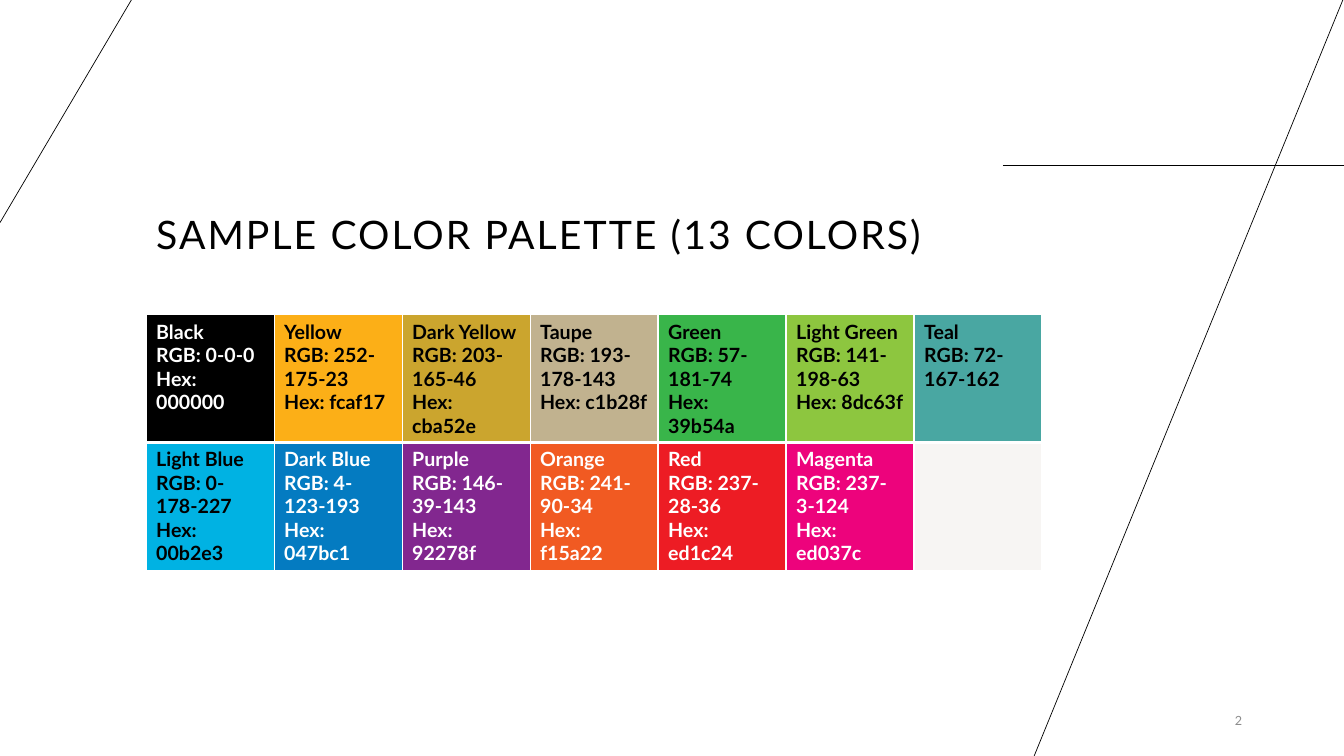
from dataclasses import dataclass

from lxml import etree
from pptx import Presentation
from pptx.dml.color import RGBColor
from pptx.enum.shapes import MSO_CONNECTOR
from pptx.enum.text import MSO_ANCHOR, MSO_AUTO_SIZE, PP_ALIGN
from pptx.oxml.ns import qn
from pptx.util import Pt

STRAIGHT = MSO_CONNECTOR.STRAIGHT
BOTTOM, MIDDLE = MSO_ANCHOR.BOTTOM, MSO_ANCHOR.MIDDLE
LEFT, RIGHT = PP_ALIGN.LEFT, PP_ALIGN.RIGHT
NO_AUTOFIT = MSO_AUTO_SIZE.NONE


@dataclass(frozen=True)
class Theme:
    font: str = "Lato"
    black: str = "000000"
    white: str = "FFFFFF"
    gray: str = "8C8C8C"
    empty: str = "F7F5F3"
    title_size: float = 28
    cell_size: float = 14
    number_size: float = 9


THEME = Theme()

# Each swatch: fill, text colour, lines of text
SWATCH_ROWS = [
    [
        ("000000", THEME.white, ["Black", "RGB: 0-0-0", "Hex: 000000"]),
        ("FCAF17", THEME.black, ["Yellow", "RGB: 252-175-23", "Hex: fcaf17"]),
        ("CBA52E", THEME.black, ["Dark Yellow", "RGB: 203-165-46", "Hex: cba52e"]),
        ("C1B28F", THEME.black, ["Taupe", "RGB: 193-178-143", "Hex: c1b28f"]),
        ("39B54A", THEME.black, ["Green", "RGB: 57-181-74", "Hex: 39b54a"]),
        ("8DC63F", THEME.black, ["Light Green", "RGB: 141-198-63", "Hex: 8dc63f"]),
        ("49A7A2", THEME.black, ["Teal", "RGB: 72-167-162"]),
    ],
    [
        ("00B2E3", THEME.black, ["Light Blue", "RGB: 0-178-227", "Hex: 00b2e3"]),
        ("047BC1", THEME.white, ["Dark Blue", "RGB: 4-123-193", "Hex: 047bc1"]),
        ("82278F", THEME.white, ["Purple", "RGB: 146-39-143", "Hex: 92278f"]),
        ("F15A22", THEME.white, ["Orange", "RGB: 241-90-34", "Hex: f15a22"]),
        ("ED1C24", THEME.white, ["Red", "RGB: 237-28-36", "Hex: ed1c24"]),
        ("ED037C", THEME.white, ["Magenta", "RGB: 237-3-124", "Hex: ed037c"]),
        (THEME.empty, THEME.black, []),
    ],
]


def write_text(frame, lines, *, size, color, font=THEME.font, bold=False,
               align=LEFT, line_spacing=None, tracking=None):
    """Fill a text frame with one paragraph per line."""
    for index, line in enumerate(lines):
        para = frame.add_paragraph() if index else frame.paragraphs[0]
        para.alignment = align
        if line_spacing:
            para.line_spacing = line_spacing
        span = para.add_run()
        span.text = line
        span.font.name = font
        span.font.size = Pt(size)
        span.font.bold = bold
        span.font.color.rgb = RGBColor.from_string(color)
        if tracking:
            span.font._element.set("spc", str(round(tracking * 100)))


class SlideBuilder:
    def __init__(self, slide, theme):
        self.slide = slide
        self.theme = theme

    def line(self, start, end, width=0.5):
        points = [Pt(value) for value in (*start, *end)]
        connector = self.slide.shapes.add_connector(STRAIGHT, *points)
        connector.line.color.rgb = RGBColor.from_string(self.theme.black)
        connector.line.width = Pt(width)
        etree.SubElement(connector._element.spPr, qn("a:effectLst"))

    def title(self, text, left, top, width, height):
        box = self.slide.shapes.title
        box.left, box.top, box.width, box.height = map(Pt, (left, top, width, height))
        frame = box.text_frame
        frame.word_wrap = True
        frame.auto_size = NO_AUTOFIT
        frame.vertical_anchor = BOTTOM
        write_text(frame, [text], size=self.theme.title_size,
                   color=self.theme.black, line_spacing=0.9, tracking=1.5)

    def page_number(self, text, left, top, width, height):
        box = self.slide.shapes.add_textbox(*map(Pt, (left, top, width, height)))
        frame = box.text_frame
        frame.word_wrap = True
        frame.vertical_anchor = MIDDLE
        write_text(frame, [text], size=self.theme.number_size,
                   color=self.theme.gray, align=RIGHT)

    def border(self, cell, **widths):
        properties = cell._tc.get_or_add_tcPr()
        for side, width in widths.items():
            edge = etree.SubElement(properties, qn(f"a:ln{side}"), w=str(Pt(width)))
            fill = etree.SubElement(edge, qn("a:solidFill"))
            etree.SubElement(fill, qn("a:srgbClr"), val=self.theme.white)

    def palette(self, rows, left, top, cell_width, cell_height):
        row_count, column_count = len(rows), len(rows[0])
        table = self.slide.shapes.add_table(
            row_count, column_count, Pt(left), Pt(top),
            Pt(cell_width * column_count), Pt(cell_height * row_count)).table
        table.first_row = table.horz_banding = False
        for column in table.columns:
            column.width = Pt(cell_width)
        for row_index, swatches in enumerate(rows):
            table.rows[row_index].height = Pt(cell_height)
            # The edge between rows is thicker than the others
            top_width = 3 if row_index else 1
            bottom_width = 3 if row_index < row_count - 1 else 1
            for column_index, (fill, color, lines) in enumerate(swatches):
                cell = table.cell(row_index, column_index)
                self.border(cell, L=1, R=1, T=top_width, B=bottom_width)
                cell.fill.solid()
                cell.fill.fore_color.rgb = RGBColor.from_string(fill)
                write_text(cell.text_frame, lines, size=self.theme.cell_size,
                           color=color, bold=True)


def main():
    deck = Presentation()
    deck.slide_width, deck.slide_height = Pt(960), Pt(540)
    page = SlideBuilder(deck.slides.add_slide(deck.slide_layouts[5]), THEME)

    # Decorative lines
    page.line((716.4, 118), (960, 118))
    page.line((960, -2), (738.7, 540))
    page.line((0, 159), (95, -2))

    # Title and page number
    page.title("SAMPLE COLOR PALETTE (13 COLORS)", 104.4, 21, 574, 167)
    page.page_number("2", 816.5, 500.4, 77.8, 28.8)

    # Colour swatches
    page.palette(SWATCH_ROWS, 104.4, 224.8, 91.44, 91.2)

    deck.save("out.pptx")


if __name__ == "__main__":
    main()
